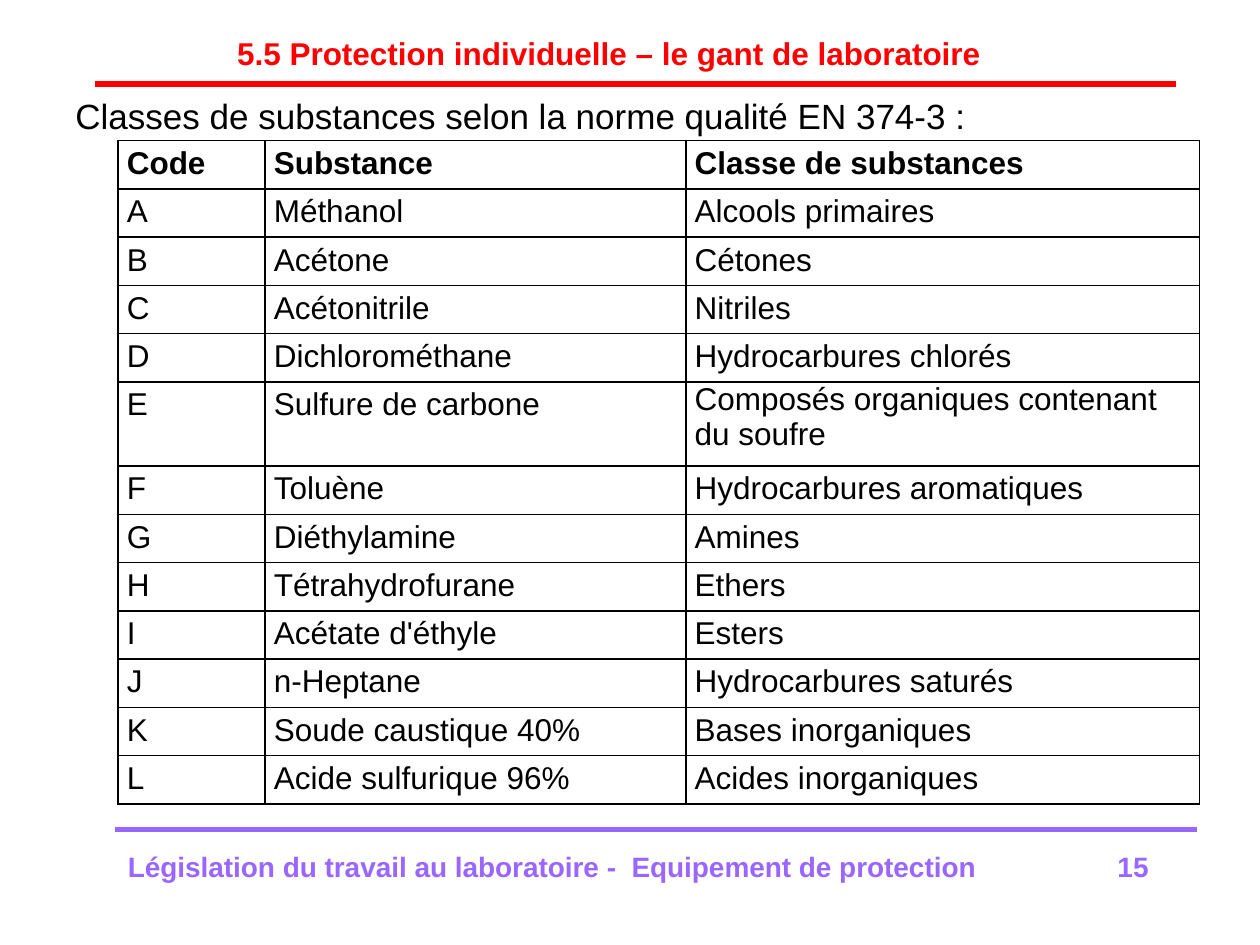
import pptx
import pptx.dml.color
import pptx.enum.shapes
import pptx.enum.text
import pptx.oxml
import pptx.oxml.ns
import pptx.util

Pt = pptx.util.Pt
ALIGN = pptx.enum.text.PP_ALIGN
ANCHOR = pptx.enum.text.MSO_ANCHOR

RED = pptx.dml.color.RGBColor(0xFF, 0x00, 0x00)
VIOLET = pptx.dml.color.RGBColor(0x99, 0x66, 0xFF)
BLACK = pptx.dml.color.RGBColor(0x00, 0x00, 0x00)

A_NS = pptx.oxml.ns.nsdecls("a")


def write_paragraph(paragraph, text, size, color, bold=False, **layout):
    """Write one Arial run; layout holds paragraph attributes."""
    for name, value in layout.items():
        setattr(paragraph, name, value)
    run = paragraph.add_run()
    run.text = text
    for name, value in {"name": "Arial", "size": Pt(size), "bold": bold}.items():
        setattr(run.font, name, value)
    run.font.color.rgb = color


def add_text(left, top, width, height, anchor):
    """Add a wrapping text box and return its first paragraph."""
    box = slide.shapes.add_textbox(Pt(left), Pt(top), Pt(width), Pt(height))
    box.text_frame.word_wrap = True
    box.text_frame.vertical_anchor = anchor
    return box.text_frame.paragraphs[0]


presentation = pptx.Presentation()
presentation.slide_width = Pt(720)
presentation.slide_height = Pt(540)
slide = presentation.slides.add_slide(presentation.slide_layouts[6])

# Title, footer and introduction
title = add_text(42, 12, 612, 36, ANCHOR.MIDDLE)
write_paragraph(title, "5.5 Protection individuelle – le gant de laboratoire", 18, RED, True,
                alignment=ALIGN.CENTER, space_before=Pt(12), space_after=Pt(3))

footer = add_text(66, 480, 612, 30, ANCHOR.MIDDLE)
write_paragraph(footer, "Législation du travail au laboratoire -  Equipement de protection\t15",
                16, VIOLET, True)
page_tab = Pt(565.5)
footer._p.get_or_add_pPr().append(pptx.oxml.parse_xml(
    f'<a:tabLst {A_NS}><a:tab pos="{page_tab}" algn="l"/></a:tabLst>'))

introduction = add_text(36, 50.4, 648, 30, ANCHOR.TOP)
write_paragraph(introduction, "Classes de substances selon la norme qualité EN 374-3 :", 20, BLACK,
                space_before=Pt(4))

# Rules above and below the content
for left, top, color in [(66, 474, VIOLET), (54, 48, RED)]:
    rule = slide.shapes.add_connector(pptx.enum.shapes.MSO_CONNECTOR.STRAIGHT,
                                      Pt(left), Pt(top), Pt(left + 618), Pt(top))
    rule.line.color.rgb = color
    rule.line.width = Pt(3)
    rule._element.spPr.append(pptx.oxml.parse_xml(f"<a:effectLst {A_NS}/>"))

# Substance classes
SUBSTANCES = [
    ("Code", "Substance", "Classe de substances"),
    ("A", "Méthanol", "Alcools primaires"),
    ("B", "Acétone", "Cétones"),
    ("C", "Acétonitrile", "Nitriles"),
    ("D", "Dichlorométhane", "Hydrocarbures chlorés"),
    ("E", "Sulfure de carbone", "Composés organiques contenant du soufre"),
    ("F", "Toluène", "Hydrocarbures aromatiques"),
    ("G", "Diéthylamine", "Amines"),
    ("H", "Tétrahydrofurane", "Ethers"),
    ("I", "Acétate d'éthyle", "Esters"),
    ("J", "n-Heptane", "Hydrocarbures saturés"),
    ("K", "Soude caustique 40%", "Bases inorganiques"),
    ("L", "Acide sulfurique 96%", "Acides inorganiques"),
]
COLUMN_WIDTHS = [84, 240.5, 293.5]
ROW_HEIGHT, TALL_ROW_HEIGHT = 27.6, 48
TWO_LINE_TEXT = "Composés organiques contenant du soufre"
CELL_FORMAT = {"margin_left": Pt(5), "margin_right": Pt(5), "margin_top": 0, "margin_bottom": 0}

table = slide.shapes.add_table(len(SUBSTANCES), len(COLUMN_WIDTHS), Pt(67.5), Pt(80.4),
                               Pt(sum(COLUMN_WIDTHS)), Pt(379.2)).table
table.first_row = False
table.horz_banding = False
for column, width in zip(table.columns, COLUMN_WIDTHS):
    column.width = Pt(width)

for row_index, substance in enumerate(SUBSTANCES):
    tall = TWO_LINE_TEXT in substance
    table.rows[row_index].height = Pt(TALL_ROW_HEIGHT if tall else ROW_HEIGHT)
    for column_index, text in enumerate(substance):
        cell = table.cell(row_index, column_index)
        for name, value in CELL_FORMAT.items():
            setattr(cell, name, value)
        if text == TWO_LINE_TEXT:
            layout = {"alignment": ALIGN.LEFT}
        else:
            layout = {"alignment": ALIGN.JUSTIFY, "line_spacing": 1.15}
        write_paragraph(cell.text_frame.paragraphs[0], text, 18, BLACK, row_index == 0, **layout)
        for side in "LRTB":
            cell._tc.get_or_add_tcPr().append(pptx.oxml.parse_xml(
                f'<a:ln{side} {A_NS} w="{Pt(1)}"><a:solidFill><a:srgbClr val="{BLACK}"/>'
                f"</a:solidFill></a:ln{side}>"))
        cell.fill.background()

presentation.save("out.pptx")
